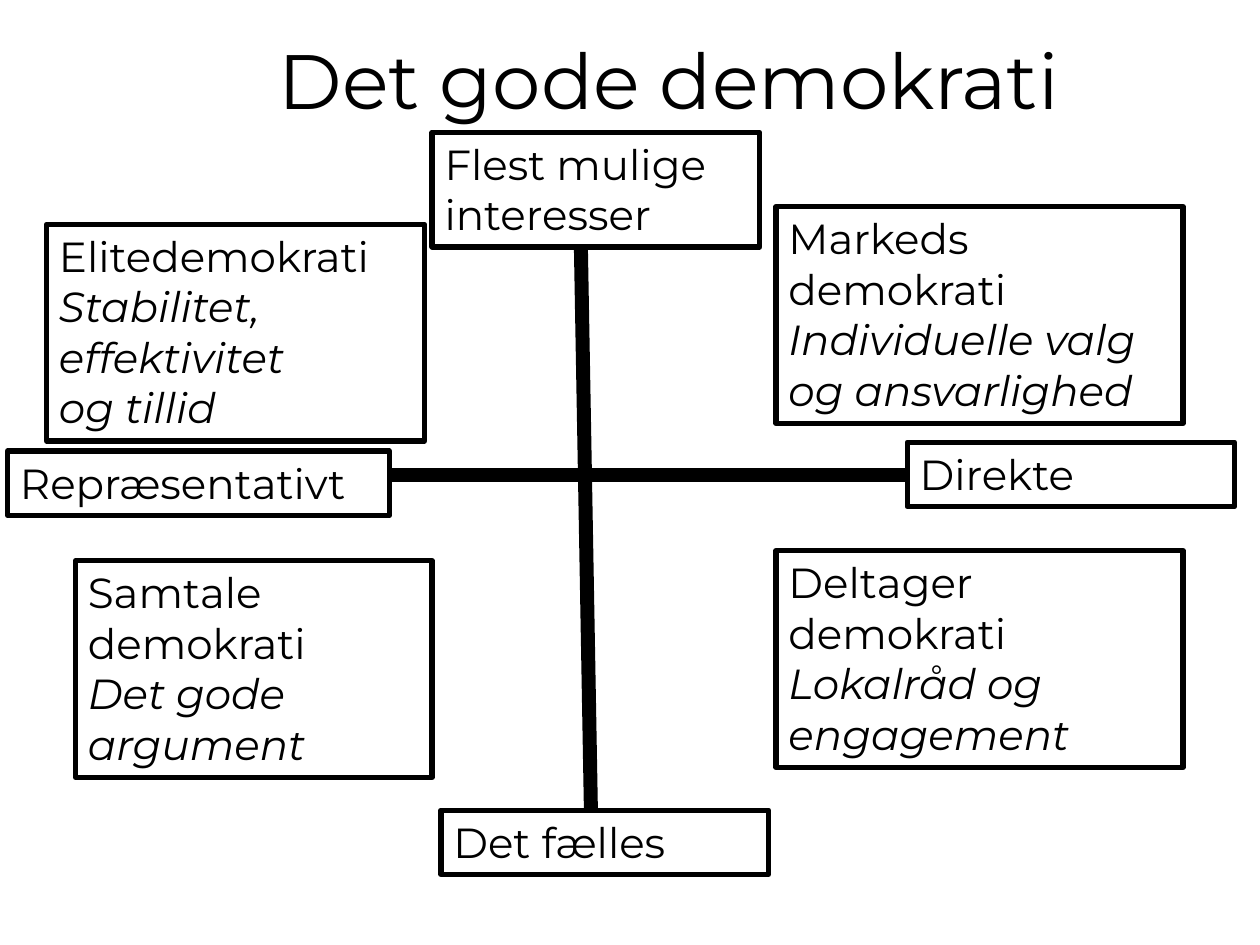
from lxml.etree import SubElement
from pptx import Presentation
from pptx.dml.color import RGBColor
from pptx.enum.shapes import MSO_CONNECTOR, MSO_SHAPE
from pptx.enum.text import MSO_ANCHOR, MSO_AUTO_SIZE, PP_ALIGN
from pptx.oxml.ns import qn
from pptx.util import Emu, Pt

PIXEL = 9144
BLACK = RGBColor(0x00, 0x00, 0x00)
WHITE = RGBColor(0xFF, 0xFF, 0xFF)
FONT = "Montserrat"
BOX_HEIGHT = {1: 51, 2: 91, 4: 172}


def px(length):
    """Turn whole pixels, 100 to the inch, into EMU."""
    return Emu(length * PIXEL)


def add_text(paragraph, text, size=24, italic=False):
    """Add text to a paragraph, breaking the line at each newline."""
    for index, line in enumerate(text.split("\n")):
        if index:
            paragraph.add_line_break()
        run = paragraph.add_run()
        run.text = line
        run.font.name = FONT
        run.font.size = Pt(size)
        run.font.italic = italic
        run.font.color.rgb = BLACK


def add_title(slide, box, text):
    """Place and format the title placeholder."""
    title = slide.shapes.title
    title.left, title.top, title.width, title.height = map(px, box)
    frame = title.text_frame
    frame.word_wrap = True
    frame.auto_size = MSO_AUTO_SIZE.NONE
    frame.vertical_anchor = MSO_ANCHOR.MIDDLE
    paragraph = frame.paragraphs[0]
    paragraph.alignment = PP_ALIGN.CENTER
    add_text(paragraph, text, size=44)


def add_box(slide, left, top, width, lines, name, values=""):
    """Add a framed box with a name and, below it, values in italics."""
    shape = slide.shapes.add_shape(
        MSO_SHAPE.RECTANGLE, px(left), px(top), px(width), px(BOX_HEIGHT[lines])
    )
    shape.shadow.inherit = False
    shape.fill.solid()
    shape.fill.fore_color.rgb = WHITE
    shape.line.color.rgb = BLACK
    shape.line.width = Pt(3)
    frame = shape.text_frame
    frame.word_wrap = True
    frame.auto_size = MSO_AUTO_SIZE.SHAPE_TO_FIT_TEXT
    frame.vertical_anchor = MSO_ANCHOR.TOP
    paragraph = frame.paragraphs[0]
    paragraph.alignment = PP_ALIGN.LEFT
    add_text(paragraph, name)
    if values:
        paragraph.add_line_break()
        add_text(paragraph, values, italic=True)


def add_axis(slide, start, end):
    """Draw one thick axis between two points."""
    axis = slide.shapes.add_connector(
        MSO_CONNECTOR.STRAIGHT, *map(px, start), *map(px, end)
    )
    axis.line.color.rgb = BLACK
    axis.line.width = Pt(8)
    SubElement(axis._element.spPr, qn("a:effectLst"))


def add_democracy_cross(slide):
    """Add the axis ends, the four types of democracy and the two axes."""
    add_box(slide, 343, 105, 260, 2, "Flest mulige interesser")
    add_box(slide, 350, 643, 260, 1, "Det fælles")
    add_box(slide, 720, 351, 260, 1, "Direkte")
    add_box(slide, 6, 358, 303, 1, "Repræsentativt")
    add_box(slide, 37, 178, 300, 4, "Elitedemokrati",
            "Stabilitet, effektivitet \nog tillid")
    add_box(slide, 616, 164, 323, 4, "Markeds demokrati",
            "Individuelle valg og ansvarlighed")
    add_box(slide, 616, 437, 323, 4, "Deltager demokrati",
            "Lokalråd og engagement")
    add_box(slide, 60, 445, 283, 4, "Samtale demokrati", "Det gode argument")
    add_axis(slide, (461, 194), (469, 643))
    add_axis(slide, (720, 377), (307, 377))


def main():
    """Build and save the presentation."""
    presentation = Presentation()
    presentation.slide_width = px(1000)
    presentation.slide_height = px(750)
    slide = presentation.slides.add_slide(presentation.slide_layouts[5])
    add_title(slide, (114, 0, 850, 125), "Det gode demokrati ")
    add_democracy_cross(slide)
    presentation.save("out.pptx")


if __name__ == "__main__":
    main()
